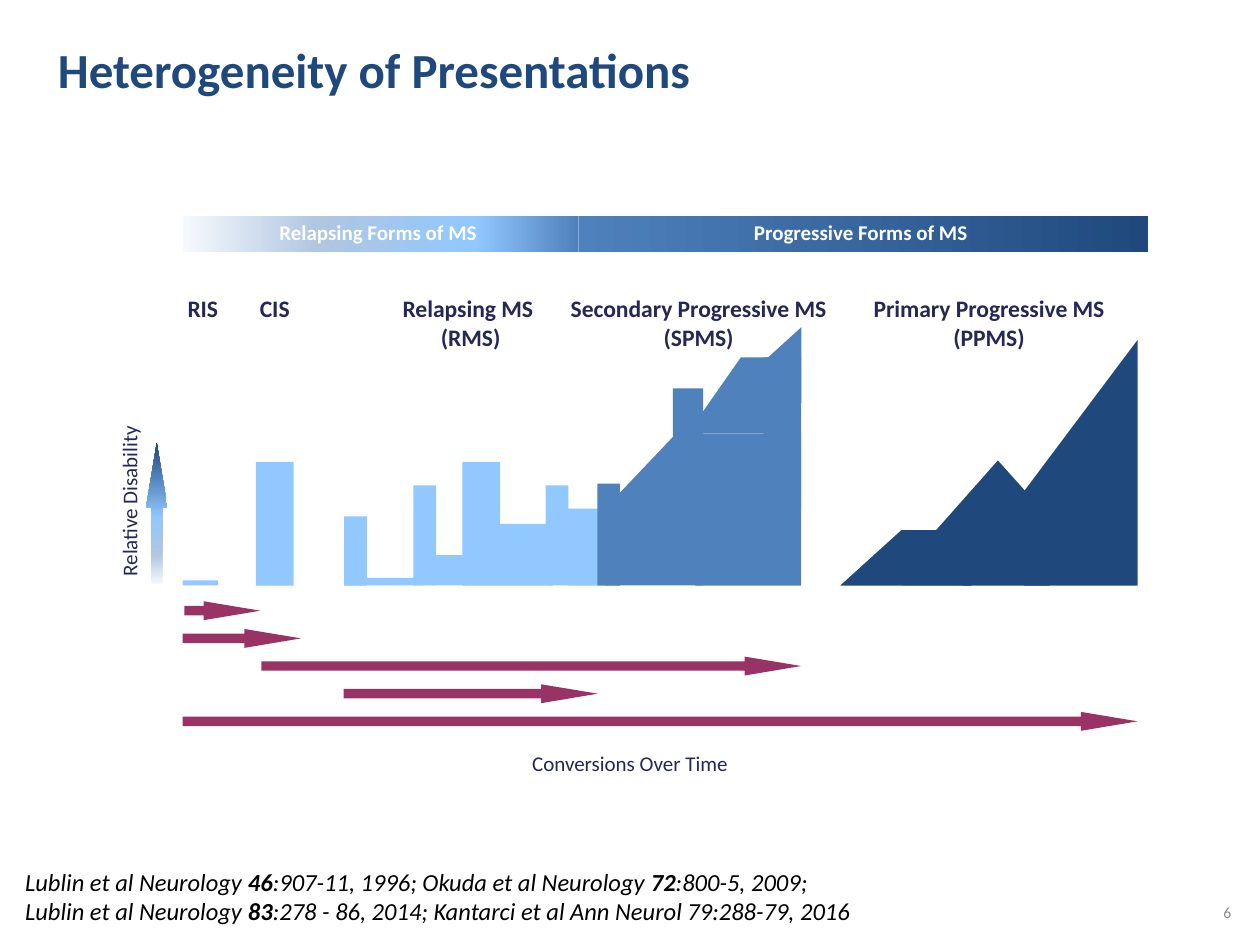
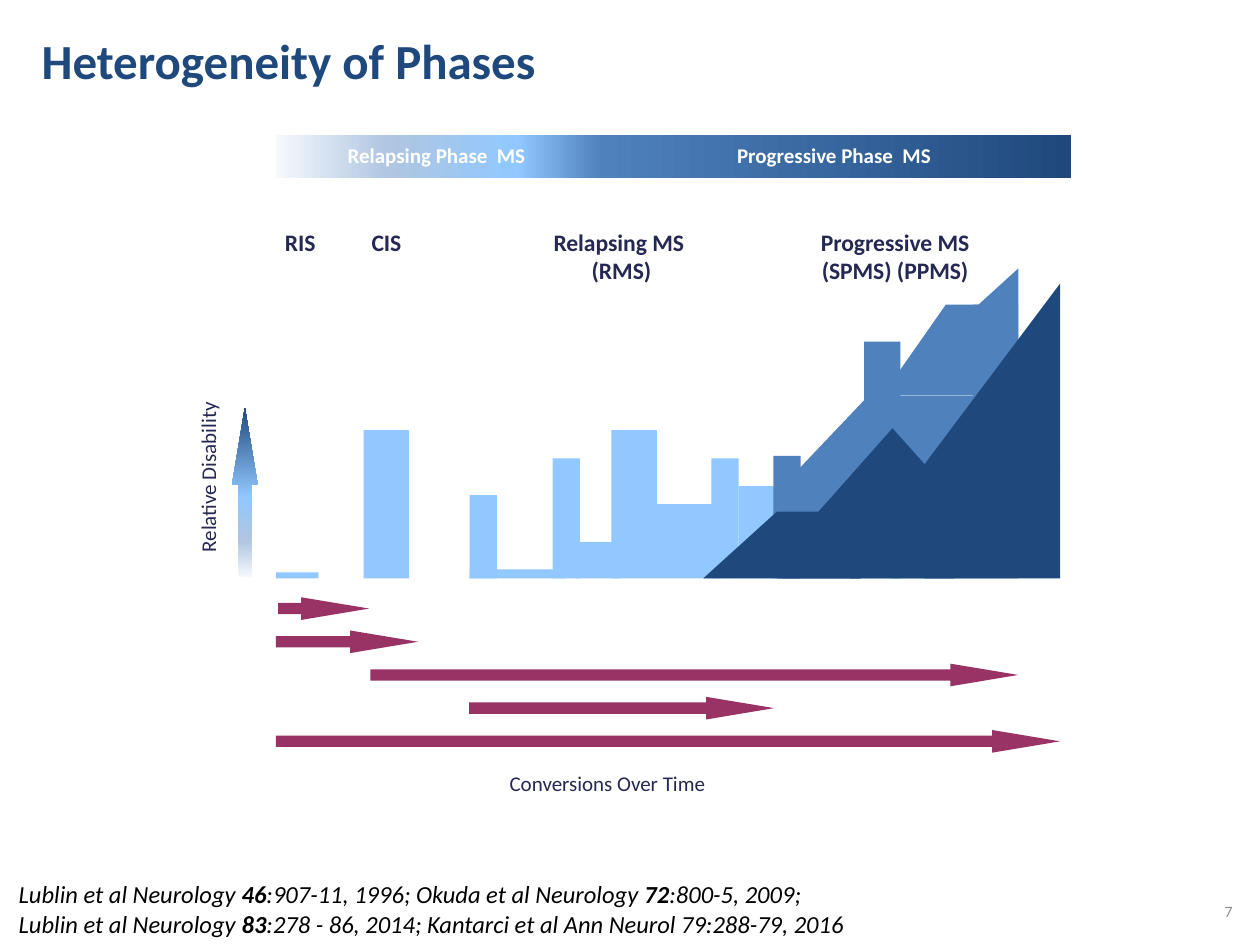
import dataclasses

import lxml.etree
import pptx
import pptx.dml.color
import pptx.enum.shapes
import pptx.enum.text
import pptx.oxml.ns
import pptx.util

Pt = pptx.util.Pt
SHAPE = pptx.enum.shapes.MSO_SHAPE
ALIGN = pptx.enum.text.PP_ALIGN
ANCHOR = pptx.enum.text.MSO_ANCHOR


@dataclasses.dataclass(frozen=True)
class Theme:
    font: str = "Calibri"
    navy: str = "1F497D"
    steel: str = "4F81BD"
    sky: str = "91C8FF"
    mist: str = "B0C6E1"
    frost: str = "F6F9FC"
    plum: str = "993366"
    label: str = "242852"
    white: str = "FFFFFF"
    black: str = "000000"
    gray: str = "8C8C8C"
    title_size: float = 28
    citation_size: float = 14
    heading_size: float = 13.5
    label_size: float = 12
    number_size: float = 9


THEME = Theme()
RELAPSING_STOPS = ((0, THEME.frost), (34, THEME.mist), (74, THEME.sky), (100, THEME.steel))
PROGRESSIVE_STOPS = ((0, THEME.steel), (100, THEME.navy))
DISABILITY_STOPS = ((0, THEME.frost), (21, THEME.mist), (47, THEME.sky), (100, THEME.navy))

#_ = None
RELAPSING_SHARE = 0.41
SECONDARY_END = 353.5
PRIMARY_WIDTH = 169.9
ARROW_STEP = 15.8

RELAPSING_BARS = (
    (0, 0, 20.2, 2.9), (41.8, 0, 21.6, 70.6), (92.2, 0, 13, 39.6),
    (131.8, 0, 13, 57.2), (159.8, 0, 21.6, 70.6), (207.4, 0, 13, 57.2),
    (220.3, 0, 17.3, 43.9), (181.4, 0, 30.2, 35.3), (142.6, 0, 21.6, 17.4),
    (92.2, 0, 46, 4.3),
)
SECONDARY_BARS = (
    (236.9, 0, 13, 58.3), (280.1, 0, 17.3, 112.7), (241.2, 0, 38.9, 52.2),
    (293, 0, 60.5, 87), (319, 95.8, 21.6, 34.6), (331.9, 43.9, 21.6, 86.4),
)
SECONDARY_PEAKS = (
    (306, 104.4, 47.5, 43.2, 1, 0),
    (241.2, 43.9, 82.1, 43.2, 0.5, 0),
    (288.7, 87.1, 60.5, 43.2, 0.5, 0),
)
PRIMARY_BARS = ((35.3, 0, 39.6, 31.7), (105.1, 0, 64.8, 54))
PRIMARY_PEAKS = (
    (105.1, 54, 64.8, 86.4, 1, 0),
    (0, 0, 74.9, 31.7, 0.467, 0),
    (40.3, 27.4, 79.2, 41.8, 0.68, 349.4),
)
PRIMARY_SLOPE = (69.8, 0, 49.7, 39.6)

CITATIONS = (
    (("Lublin et al Neurology ", False), ("46", True),
     (":907-11, 1996; Okuda et al Neurology ", False), ("72", True), (":800-5, 2009;", False)),
    (("Lublin et al Neurology ", False), ("83", True),
     (":278 - 86, 2014; Kantarci et al Ann Neurol 79:288-79, 2016", False)),
)


@dataclasses.dataclass(frozen=True)
class Frame:
    left: float
    baseline: float
    scale: float

    def box(self, x, bottom, width, height):
        return (self.left + x * self.scale,
                self.baseline - (bottom + height) * self.scale,
                width * self.scale, height * self.scale)


def points(box):
    return [Pt(value) for value in box]


def style_font(font, size, color, bold=False, italic=False):
    font.name, font.size, font.bold, font.italic = THEME.font, Pt(size), bold, italic
    font.color.rgb = pptx.dml.color.RGBColor.from_string(color)


def set_gradient(shape, stops, angle):
    shape.fill.gradient()
    shape.fill.gradient_angle = angle
    stop_list = shape.fill._fill._gradFill.find(pptx.oxml.ns.qn("a:gsLst"))
    for stop in list(stop_list):
        stop_list.remove(stop)
    for position, color in stops:
        stop = lxml.etree.SubElement(stop_list, pptx.oxml.ns.qn("a:gs"), pos=str(position * 1000))
        lxml.etree.SubElement(stop, pptx.oxml.ns.qn("a:srgbClr"), val=color)


def add_figure(slide, kind, box, fill, adjustments=(), rotation=0, angle=0):
    shape = slide.shapes.add_shape(kind, *points(box))
    shape.shadow.inherit = False
    shape.line.fill.background()
    shape.rotation = rotation
    for index, value in enumerate(adjustments):
        shape.adjustments[index] = value
    if isinstance(fill, str):
        shape.fill.solid()
        shape.fill.fore_color.rgb = pptx.dml.color.RGBColor.from_string(fill)
    else:
        set_gradient(shape, fill, angle)
    return shape


def add_label(slide, box, text, size, color=THEME.label, bold=False,
              align=ALIGN.CENTER, anchor=ANCHOR.TOP, side_margin=0):
    label = slide.shapes.add_textbox(*points(box))
    frame = label.text_frame
    frame.word_wrap = True
    frame.vertical_anchor = anchor
    frame.margin_left = frame.margin_right = Pt(side_margin)
    paragraph = frame.paragraphs[0]
    paragraph.text = text
    paragraph.alignment = align
    style_font(paragraph.font, size, color, bold)
    return label


def add_title(slide, box, text):
    title = slide.shapes.title
    title.left, title.top, title.width, title.height = points(box)
    frame = title.text_frame
    frame.auto_size = pptx.enum.text.MSO_AUTO_SIZE.NONE
    frame.vertical_anchor = ANCHOR.MIDDLE
    paragraph = frame.paragraphs[0]
    paragraph.text = text
    paragraph.alignment = ALIGN.LEFT
    style_font(paragraph.font, THEME.title_size, THEME.navy, bold=True)


def add_bands(slide, frame, total_width, texts):
    _, top, _, height = frame.box(0, 190.8, 0, 20.2)
    relapsing_width = total_width * RELAPSING_SHARE
    bands = (
        (frame.left, relapsing_width, RELAPSING_STOPS),
        (frame.left + relapsing_width, total_width - relapsing_width, PROGRESSIVE_STOPS),
    )
    for (left, width, stops), text in zip(bands, texts):
        band = add_figure(slide, SHAPE.RECTANGLE, (left, top, width, height), stops)
        band.text_frame.vertical_anchor = ANCHOR.MIDDLE
        paragraph = band.text_frame.paragraphs[0]
        paragraph.text = text
        paragraph.alignment = ALIGN.CENTER
        paragraph.line_spacing = 0.9
        paragraph.space_after = Pt(4.5)
        style_font(paragraph.font, THEME.label_size, THEME.white, bold=True)


def add_silhouette(slide, frame, color, bars, peaks=()):
    for bar in bars:
        add_figure(slide, SHAPE.RECTANGLE, frame.box(*bar), color)
    for *box, apex, rotation in peaks:
        add_figure(slide, SHAPE.ISOSCELES_TRIANGLE, frame.box(*box), color, (apex,), rotation)


def add_courses(slide, frame, primary_start):
    add_silhouette(slide, frame, THEME.sky, RELAPSING_BARS)
    add_silhouette(slide, frame, THEME.steel, SECONDARY_BARS, SECONDARY_PEAKS)
    primary = dataclasses.replace(frame, left=frame.left + primary_start * frame.scale)
    add_silhouette(slide, primary, THEME.navy, PRIMARY_BARS, PRIMARY_PEAKS)
    add_figure(slide, SHAPE.FLOWCHART_MANUAL_INPUT, primary.box(*PRIMARY_SLOPE), THEME.navy)


def add_disability_axis(slide, frame):
    add_figure(slide, SHAPE.UP_ARROW, frame.box(-20.9, 0.7, 12.2, 80.6),
               DISABILITY_STOPS, (0.5, 3), angle=90)
    label = add_label(slide, frame.box(-81.4, 37.4, 101.5, 21.6),
                      "Relative Disability", THEME.label_size)
    label.rotation = 270


def add_headings(slide, frame, headings):
    for center, width, text in headings:
        box = frame.box(center - width / 2, 129.6, width, 40.3)
        add_label(slide, box, text, THEME.heading_size, bold=True)


def add_conversions(slide, frame, primary_start, caption_box):
    spans = ((1, 44.4), (0, 67.7), (45, SECONDARY_END),
             (92, 237.2), (0, primary_start + PRIMARY_WIDTH))
    for row, (start, end) in enumerate(spans):
        box = frame.box(start, -19.8 - row * ARROW_STEP, end - start, 10.8)
        add_figure(slide, SHAPE.RIGHT_ARROW, box, THEME.plum, (0.5, 3))
    add_label(slide, caption_box, "Conversions Over Time", THEME.label_size)


def add_citations(slide, box):
    frame = slide.shapes.add_textbox(*points(box)).text_frame
    frame.word_wrap = True
    for index, citation in enumerate(CITATIONS):
        paragraph = frame.add_paragraph() if index else frame.paragraphs[0]
        style_font(paragraph.font, THEME.citation_size, THEME.black, italic=True)
        for text, bold in citation:
            run = paragraph.add_run()
            run.text = text
            style_font(run.font, THEME.citation_size, THEME.black, bold, italic=True)


def build_slide(presentation, number, title, title_box, frame, band_width, band_texts,
                primary_start, headings, caption_box, citation_box, number_box):
    slide = presentation.slides.add_slide(presentation.slide_layouts[5])
    add_title(slide, title_box, title)
    add_courses(slide, frame, primary_start)
    add_bands(slide, frame, band_width, band_texts)
    add_disability_axis(slide, frame)
    add_headings(slide, frame, headings)
    add_conversions(slide, frame, primary_start, caption_box)
    add_citations(slide, citation_box)
    add_label(slide, number_box, str(number), THEME.number_size, THEME.gray,
              align=ALIGN.RIGHT, anchor=ANCHOR.MIDDLE, side_margin=7.2)


def main():
    presentation = pptx.Presentation()
    presentation.slide_width, presentation.slide_height = Pt(720), Pt(540)
    shared_headings = (
        (11.5, 33, "RIS"), (52.6, 33, "CIS"), (164.5, 118.8, "Relapsing MS \v(RMS)"),
    )
    build_slide(
        presentation, 6, "Heterogeneity of Presentations", (25.9, 18.7, 517.7, 41),
        Frame(104.4, 334.6, 1), 551.5,
        ("Relapsing Forms of MS ", "Progressive Forms of MS "), 375.8,
        shared_headings + ((294.8, 164.9, "Secondary Progressive MS\v(SPMS)"),
                           (460.8, 148.3, "Primary Progressive MS\v(PPMS)")),
        (131, 425.5, 458, 21.6), (7.2, 491.8, 491, 41), (542.9, 510.5, 167.8, 21.6))
    build_slide(
        presentation, 7, "Heterogeneity of Phases", (16.6, 13.7, 517.7, 41),
        Frame(157.7, 330.5, 1.2), 454.3,
        ("Relapsing Phase  MS ", "Progressive Phase  MS "), 203.5,
        shared_headings + ((294.8, 164.9, "Progressive MS\v(SPMS) (PPMS)"),),
        (189.4, 437, 315.4, 25.9), (3.6, 499, 499.7, 41), (543.6, 509.8, 167.8, 21.6))
    presentation.save("out.pptx")


if __name__ == "__main__":
    main()
